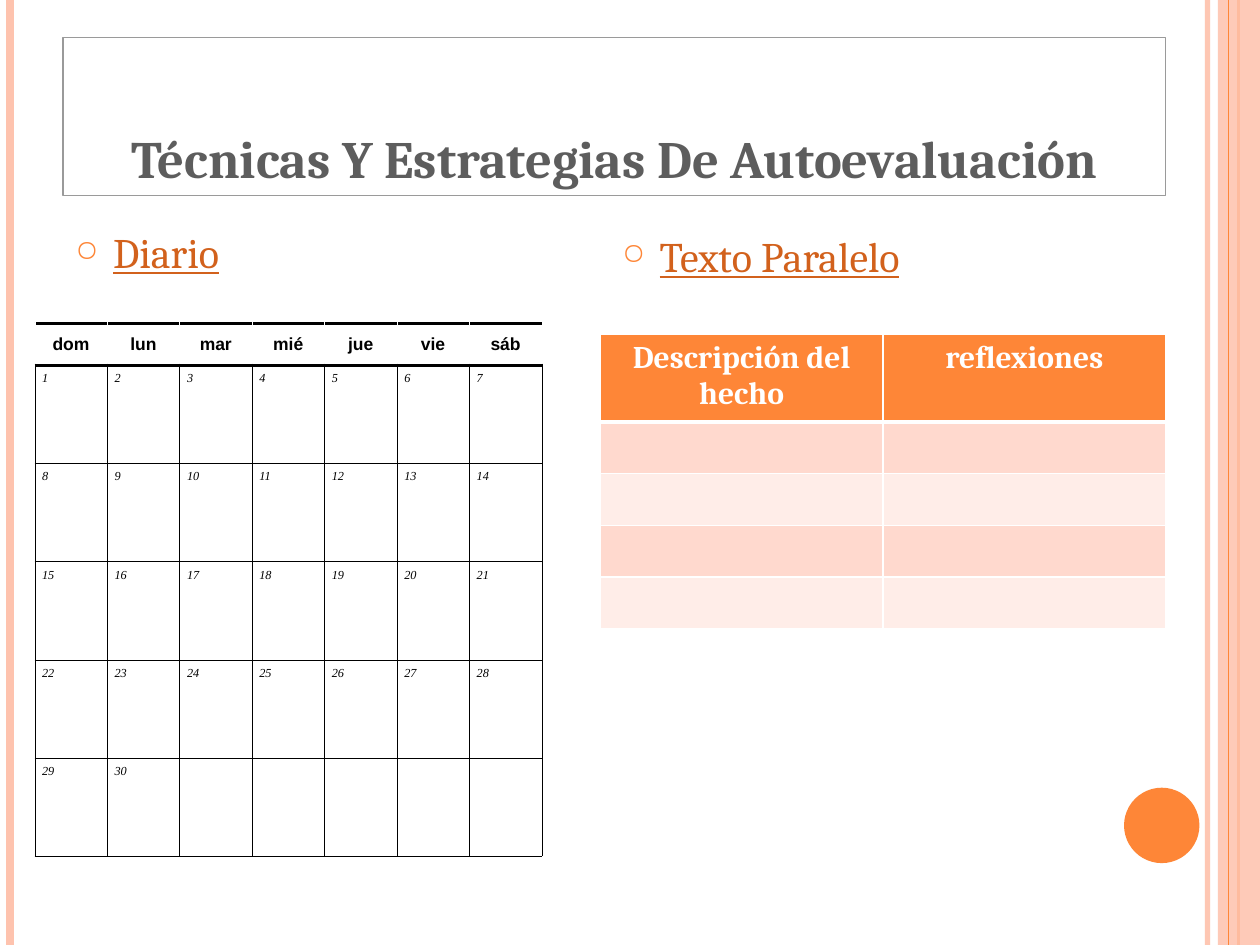
"""Build a slide on self-assessment techniques with a calendar and a parallel-text table."""
from lxml.etree import SubElement
from pptx import Presentation
from pptx.dml.color import RGBColor
from pptx.enum.shapes import MSO_CONNECTOR, MSO_SHAPE
from pptx.enum.text import MSO_ANCHOR, PP_ALIGN
from pptx.oxml import parse_xml
from pptx.oxml.ns import nsdecls, qn
from pptx.util import Cm, Pt

ORANGE, PEACH, WHITE, BLACK = "FE8637", "FEC3AE", "FFFFFF", "000000"


def paint(target, color, alpha=100):
    target.solid()
    target.fore_color.rgb = RGBColor.from_string(color)
    if alpha < 100:
        node = target.fore_color._xFill.find(qn("a:srgbClr"))
        SubElement(node, qn("a:alpha"), val=str(alpha * 1000))


def write(frame, text, font="Cambria", size=18, color=BLACK, bold=False, italic=False,
          under=False, align=PP_ALIGN.LEFT, space=None):
    par = frame.paragraphs[0]
    par.alignment = align
    par.line_spacing = space
    run = par.add_run()
    run.text = text
    run.font.name = font
    run.font.size = Pt(size)
    run.font.bold = bold
    run.font.italic = italic
    run.font.underline = under
    paint(run.font.fill, color)
    return par


deck = Presentation()
deck.slide_width, deck.slide_height = Cm(25.4), Cm(19.05)
slide = deck.slides.add_slide(deck.slide_layouts[6])
shapes = slide.shapes

stripes = [(24.34, PEACH, 3, 93), (0.2, PEACH, 4.5, 100),
           (24.97, ORANGE, 1.5, 100), (24.76, ORANGE, 0.75, 100)]
for left, color, width, alpha in stripes:
    if left == 24.76:
        band = shapes.add_shape(MSO_SHAPE.RECTANGLE, Cm(24.55), 0, Cm(0.85), Cm(19.05))
        band.shadow.inherit = False
        paint(band.fill, PEACH, 87)
        band.line.fill.background()
    stripe = shapes.add_connector(MSO_CONNECTOR.STRAIGHT, Cm(left), 0, Cm(left), Cm(19.05))
    stripe.line.width = Pt(width)
    paint(stripe.line.fill, color, alpha)
    SubElement(stripe._element.spPr, qn("a:effectLst"))

dot = shapes.add_shape(MSO_SHAPE.OVAL, Cm(22.66), Cm(15.88), Cm(1.52), Cm(1.52))
dot.shadow.inherit = False
paint(dot.fill, ORANGE)
dot.line.fill.background()

title = shapes.add_textbox(Cm(1.27), Cm(0.76), Cm(22.23), Cm(3.18))
title.line.width = Pt(0.75)
paint(title.line.fill, "9A9A9A")
title.text_frame.word_wrap = True
title.text_frame.vertical_anchor = MSO_ANCHOR.BOTTOM
write(title.text_frame, "Técnicas Y Estrategias De Autoevaluación", size=30,
      color="5D5D5D", bold=True, align=PP_ALIGN.CENTER)

heads = [("Diario", 1.27, 4.45, 1.68), ("Texto Paralelo", 12.29, 4.52, 1.47)]
for text, left, top, height in heads:
    box = shapes.add_textbox(Cm(left), Cm(top), Cm(11.23), Cm(height))
    box.text_frame.word_wrap = True
    par = write(box.text_frame, text, size=24, color="D2611C", under=True)
    par.space_before = Pt(6)
    props = par._p.get_or_add_pPr()
    props.set("marL", str(Cm(0.76)))
    props.set("indent", str(-Cm(0.76)))
    tint = SubElement(props, qn("a:buClr"))
    SubElement(tint, qn("a:srgbClr"), val=ORANGE)
    SubElement(props, qn("a:buSzPct"), val="70000")
    SubElement(props, qn("a:buChar"), char="○")

edges = []

notes = shapes.add_table(5, 2, Cm(12.1), Cm(6.73), Cm(11.4), Cm(5.86)).table
for col in notes.columns:
    col.width = Cm(5.7)
for num, row in enumerate(notes.rows):
    row.height = Cm(1.04 if num else 1.7)
    for cell in row.cells:
        paint(cell.fill, ("FFEDE8" if num % 2 == 0 else "FFD9CE") if num else ORANGE)
        edges.append((cell, WHITE, 1, WHITE, 3 if num == 1 else 1, 1 if num else 3))
for cell, text in zip(notes.rows[0].cells, ["Descripción del hecho", "reflexiones"]):
    write(cell.text_frame, text, color=WHITE, bold=True, align=PP_ALIGN.CENTER)

month = shapes.add_table(6, 7, Cm(0.7), Cm(6.52), Cm(10.22), Cm(10.74)).table
days = ["dom", "lun", "mar", "mié", "jue", "vie", "sáb"]
for col in month.columns:
    col.width = Cm(1.46)
for num, row in enumerate(month.rows):
    row.height = Cm(1.98 if num else 0.84)
    for pos, cell in enumerate(row.cells):
        paint(cell.fill, WHITE)
        cell.margin_left = Cm(0.15 if num else 0.08)
        cell.margin_right = cell.margin_top = cell.margin_bottom = Cm(0.08)
        date = 7 * (num - 1) + pos + 1
        if num == 0:
            cell.vertical_anchor = MSO_ANCHOR.MIDDLE
            write(cell.text_frame, days[pos], font="Arial", size=10, bold=True,
                  align=PP_ALIGN.CENTER)
            edges.append((cell, WHITE, 0.25, BLACK, 2, 2))
        else:
            if date <= 30:
                write(cell.text_frame, str(date), font="Times New Roman", size=7,
                      italic=True, space=1.19)
            edges.append((cell, BLACK, 0.25, BLACK, 2 if num == 1 else 0.25, 0.25))

for cell, side, thin, flat, top, base in edges:
    props = cell._tc.get_or_add_tcPr()
    sides = [("L", side, thin), ("R", side, thin), ("T", flat, top), ("B", flat, base)]
    for spot, (name, color, width) in enumerate(sides):
        props.insert(spot, parse_xml(
            f'<a:ln{name} {nsdecls("a")} w="{Pt(width)}"><a:solidFill>'
            f'<a:srgbClr val="{color}"/></a:solidFill></a:ln{name}>'))

deck.save("out.pptx")
